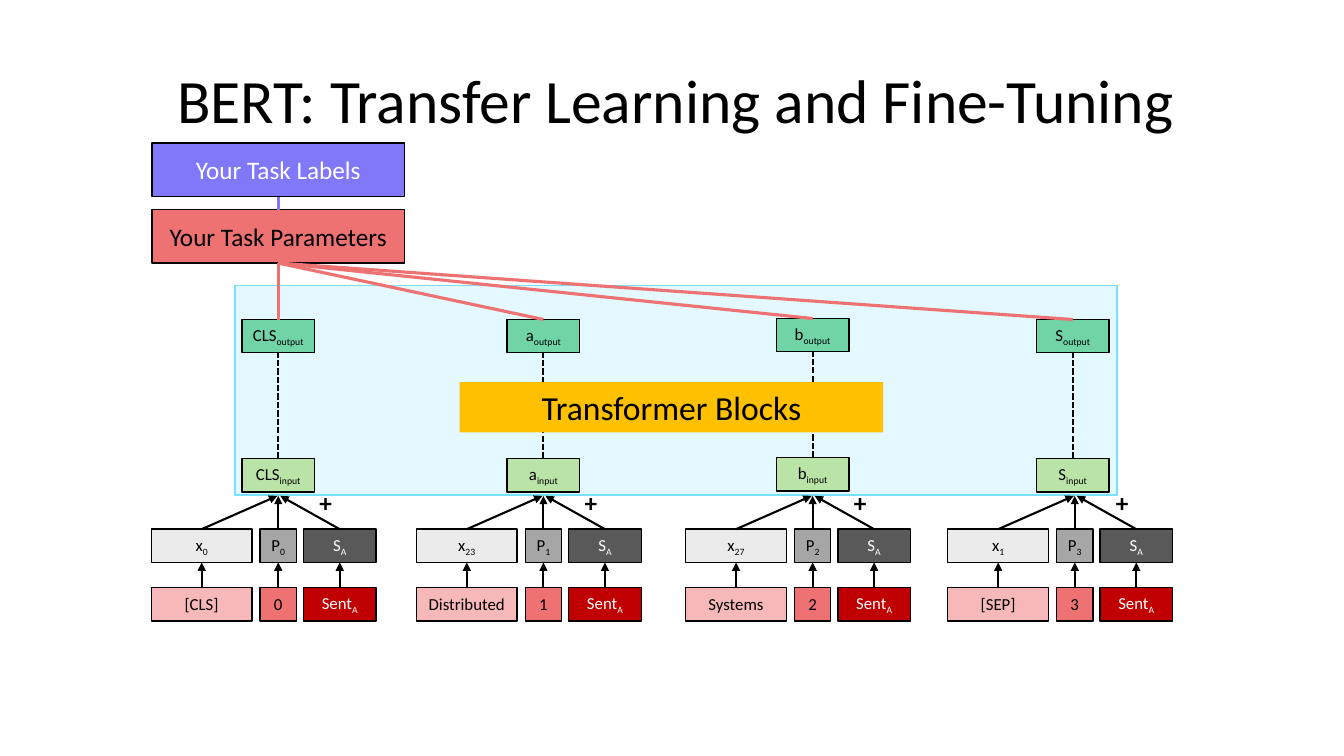
from lxml.etree import SubElement
from pptx import Presentation
from pptx.dml.color import RGBColor
from pptx.enum.dml import MSO_LINE
from pptx.enum.shapes import MSO_CONNECTOR, MSO_SHAPE
from pptx.enum.text import MSO_ANCHOR, PP_ALIGN
from pptx.oxml.ns import qn
from pptx.util import Emu, Pt

BLACK = RGBColor(0x00, 0x00, 0x00)
WHITE = RGBColor(0xFF, 0xFF, 0xFF)
SKY = RGBColor(0x77, 0xE1, 0xFF)
CORAL = RGBColor(0xEF, 0x72, 0x73)
SILVER = RGBColor(0xD9, 0xD9, 0xD9)
GREY = RGBColor(0xA6, 0xA6, 0xA6)
SLATE = RGBColor(0x59, 0x59, 0x59)
RED = RGBColor(0xC0, 0x00, 0x00)
LIME = RGBColor(0x92, 0xD0, 0x50)
GREEN = RGBColor(0x00, 0xB0, 0x50)
GOLD = RGBColor(0xFF, 0xC0, 0x00)
VIOLET = RGBColor(0x80, 0x77, 0xF9)
TOP, BOTTOM = 0, 2
WIDE, HIGH = 1333, 750
COLUMNS = [
    (150, 240, 0, "[CLS]", "x_0", "CLS"),
    (413, 503, 0, "Distributed", "x_23", "a"),
    (680, 770, 1, "Systems", "x_27", "b"),
    (940, 1028, 0, "[SEP]", "x_1", "S"),
]


def px(n):
    """Turn px, 100 to the inch, into EMU."""
    return Emu(n * 9144)


class Deck:
    """Hold the style and the current slide, and draw each kind of element."""

    def __init__(self):
        """Open a one-slide deck on the blank layout."""
        self.prs = Presentation()
        self.prs.slide_width, self.prs.slide_height = px(WIDE), px(HIGH)
        self.shapes = self.prs.slides.add_slide(self.prs.slide_layouts[6]).shapes
        self.font = {"name": "Calibri", "size": Pt(12), "bold": False}

    def fill_text(self, shape, text, ink, frame=None, align=PP_ALIGN.CENTER, **font):
        """Set text in a shape, with the part after _ as a subscript."""
        style = {"word_wrap": True, "vertical_anchor": MSO_ANCHOR.MIDDLE}
        for key, value in (style | (frame or {})).items():
            setattr(shape.text_frame, key, value)
        para = shape.text_frame.paragraphs[0]
        para.alignment = align
        base, _, sub = text.partition("_")
        for part, shift in ((base, None), (sub, "-25000")):
            if part:
                run = para.add_run()
                run.text = part
                for key, value in (self.font | font).items():
                    setattr(run.font, key, value)
                run.font.color.rgb = ink
                if shift:
                    run.font._element.set("baseline", shift)
        return para

    def box(self, place, fill, text="", ink=BLACK, alpha=100, edge=BLACK, frame=None, **font):
        """Draw a filled rectangle with an optional edge and label."""
        shape = self.shapes.add_shape(MSO_SHAPE.RECTANGLE, *map(px, place))
        shape.shadow.inherit = False
        shape.fill.solid()
        shape.fill.fore_color.rgb = fill
        if alpha < 100:
            tint = shape.fill._xPr.find(".//" + qn("a:srgbClr"))
            SubElement(tint, qn("a:alpha")).set("val", str(alpha * 1000))
        if edge is None:
            shape.line.fill.background()
        else:
            shape.line.color.rgb = edge
            shape.line.width = Pt(1)
        if text:
            self.fill_text(shape, text, ink, frame, **font)
        return shape

    def label(self, place, text, **style):
        """Place free text."""
        return self.fill_text(self.shapes.add_textbox(*map(px, place)), text, BLACK, **style)

    def link(self, start, site, end=None, point=(0, 0), ink=BLACK, width=1.5, dash=None, arrow=False):
        """Draw a line from a box's side to the facing side of another box or to a point."""
        spot = [px(n) for n in point]
        line = self.shapes.add_connector(MSO_CONNECTOR.STRAIGHT, *spot, *spot)
        line.begin_connect(start, site)
        if end is not None:
            line.end_connect(end, BOTTOM - site)
        line.line.color.rgb = ink
        for key, value in {"width": Pt(width), "dash_style": dash}.items():
            setattr(line.line, key, value)
        if arrow:
            SubElement(line.line._get_or_add_ln(), qn("a:tailEnd")).set("type", "triangle")
        SubElement(line._element.spPr, qn("a:effectLst"))

    def column(self, order, left, node, lift, word, embed, name):
        """Draw one token's stack and return its output box."""
        parts = [
            (0, 100, word, CORAL, embed, SILVER, 50, BLACK, 125),
            (108, 36, str(order), CORAL, f"P_{order}", GREY, 100, BLACK, 126),
            (151, 72, "Sent_A", RED, "S_A", SLATE, 100, WHITE, 128),
        ]
        for shift, width, low, warm, high, cool, alpha, ink, tip in parts:
            token = self.box((left + shift, 583, width, 33), warm, low, ink, alpha)
            vector = self.box((left + shift, 525, width, 33), cool, high, ink, alpha)
            self.link(token, TOP, vector, arrow=True)
            self.link(vector, TOP, point=(left + tip, 492), arrow=True)
        self.label((left + 157, 478, 33, 40), "+", frame={"word_wrap": False},
                   align=PP_ALIGN.LEFT, size=Pt(18), bold=True)
        source = self.box((node, 455 - lift, 72, 33), LIME, name + "_input", alpha=50)
        result = self.box((node, 317 - lift, 72, 33), GREEN, name + "_output", alpha=50,
                          frame={"margin_left": 0, "margin_right": 0})
        self.link(source, TOP, result, dash=MSO_LINE.SQUARE_DOT)
        return result


def main():
    """Build the slide and save it."""
    deck = Deck()
    deck.box((233, 283, 875, 208), SKY, alpha=20, edge=SKY)
    results = [deck.column(order, *row) for order, row in enumerate(COLUMNS)]
    deck.box((456, 379, 420, 50), GOLD, "Transformer Blocks", edge=None, size=Pt(24))
    task = deck.box((151, 208, 250, 53), CORAL, "Your Task Parameters", size=Pt(18))
    title = deck.label((83, 30, 1175, 145), "BERT: Transfer Learning and Fine-Tuning", size=Pt(44))
    title.line_spacing = 0.9
    goal = deck.box((151, 142, 250, 53), VIOLET, "Your Task Labels", WHITE, size=Pt(18))
    deck.link(task, TOP, goal, ink=VIOLET, width=2.25)
    for result in results:
        deck.link(result, TOP, task, ink=CORAL, width=2.25)
    deck.prs.save("out.pptx")


if __name__ == "__main__":
    main()
